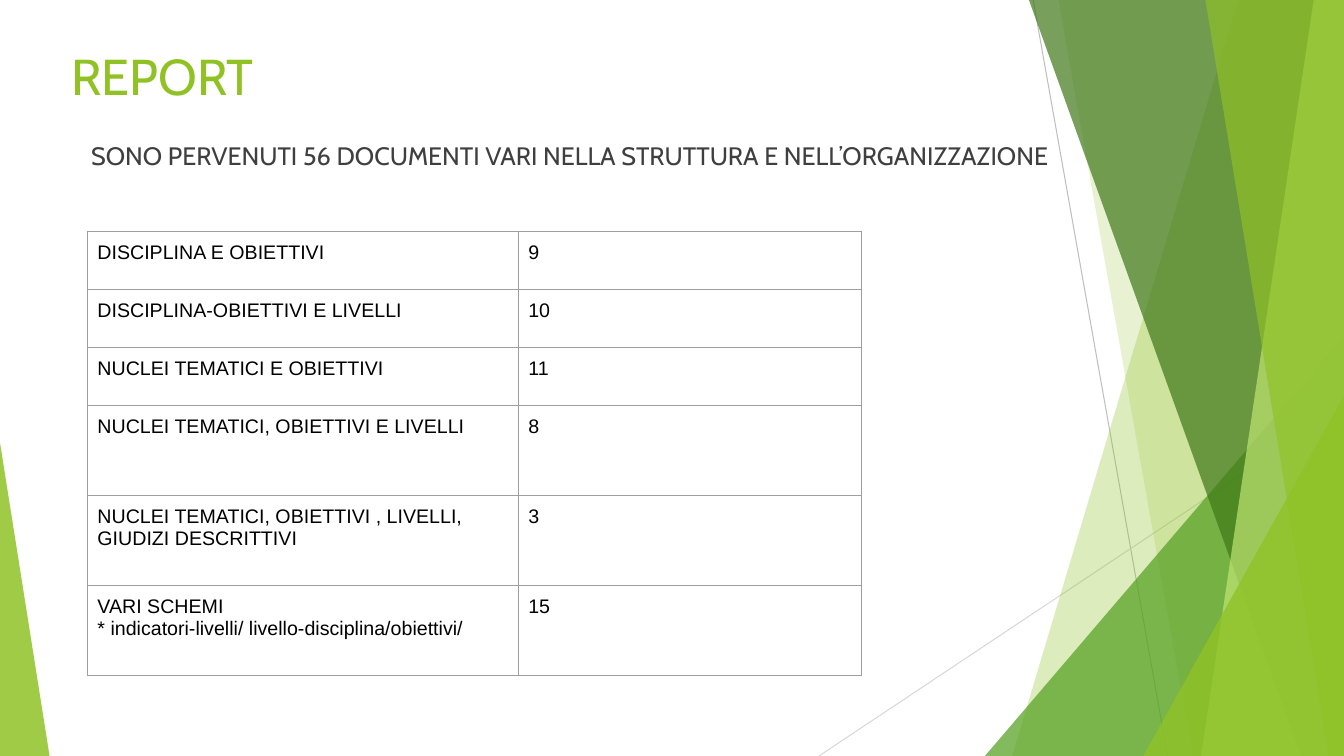
from lxml import etree
from pptx import Presentation
from pptx.dml.color import RGBColor
from pptx.enum.shapes import MSO_CONNECTOR, MSO_SHAPE
from pptx.enum.text import MSO_ANCHOR, MSO_AUTO_SIZE, PP_ALIGN
from pptx.oxml.ns import qn
from pptx.util import Inches, Pt

STRAIGHT = MSO_CONNECTOR.STRAIGHT
TRIANGLE = MSO_SHAPE.ISOSCELES_TRIANGLE
TOP = MSO_ANCHOR.TOP
LEFT = PP_ALIGN.LEFT
NO_AUTOFIT = MSO_AUTO_SIZE.NONE

COLS, ROWS = 160, 90
LIME, GREEN, FOREST, PALE = "90C226", "54A021", "3F7818", "BFE471"
INK, BLACK, BORDER = "3F3F3F", "000000", "9E9E9E"

ENTRIES = [
    ("DISCIPLINA E OBIETTIVI", "9"),
    ("DISCIPLINA-OBIETTIVI E LIVELLI", "10"),
    ("NUCLEI TEMATICI E OBIETTIVI", "11"),
    ("NUCLEI TEMATICI, OBIETTIVI E LIVELLI", "8"),
    ("NUCLEI TEMATICI, OBIETTIVI , LIVELLI, GIUDIZI DESCRITTIVI", "3"),
    ("VARI SCHEMI\n* indicatori-livelli/ livello-disciplina/obiettivi/", "15"),
]


def grid(*units):
    return [Inches(u / 12) for u in units]


def rgb(value):
    return RGBColor.from_string(value)


def write(tf, text, font="Arial", size=14, color=BLACK, indent=0):
    tf.word_wrap = True
    for i, line in enumerate(text.split("\n")):
        p = tf.paragraphs[0] if i == 0 else tf.add_paragraph()
        p.alignment = LEFT
        p.space_before = Pt(0)
        pPr = p._p.get_or_add_pPr()
        pPr.set("marL", str(grid(indent)[0]))
        pPr.set("indent", "0")
        etree.SubElement(pPr, qn("a:buNone"))
        r = p.add_run()
        r.text = line
        r.font.name, r.font.size = font, Pt(size)
        r.font.color.rgb = rgb(color)


class Deck:
    heading_font = "Cabin"
    hairline = 0.75

    def __init__(self):
        self.prs = Presentation()
        self.prs.slide_width, self.prs.slide_height = grid(COLS, ROWS)
        self.s = self.prs.slides.add_slide(self.prs.slide_layouts[1])

    def line(self, x1, y1, x2, y2, color):
        sp = self.s.shapes.add_connector(STRAIGHT, *grid(x1, y1, x2, y2))
        sp.line.color.rgb = rgb(color)
        sp.line.width = Pt(self.hairline)
        etree.SubElement(sp._element.spPr, qn("a:effectLst"))

    def paint(self, sp, color, opacity):
        sp.shadow.inherit = False
        sp.line.fill.background()
        sp.fill.solid()
        sp.fill.fore_color.rgb = rgb(color)
        clr = sp._element.spPr.find(qn("a:solidFill")).find(qn("a:srgbClr"))
        etree.SubElement(clr, qn("a:alpha"), val=str(opacity * 1000))

    def band(self, top_x, bottom_x, color, opacity):
        fb = self.s.shapes.build_freeform(*grid(top_x, 0))
        corners = [(COLS, 0), (COLS, ROWS), (bottom_x, ROWS)]
        fb.add_line_segments([grid(*c) for c in corners])
        self.paint(fb.convert_to_shape(), color, opacity)

    def corner(self, x, y, width, apex, color, opacity):
        sp = self.s.shapes.add_shape(TRIANGLE, *grid(x, y, width, ROWS - y))
        sp.adjustments[0] = apex
        self.paint(sp, color, opacity)

    def placeholder(self, index, box, text, **style):
        sp = self.s.placeholders[index]
        sp.left, sp.top, sp.width, sp.height = grid(*box)
        tf = sp.text_frame
        tf.auto_size = NO_AUTOFIT
        tf.vertical_anchor = TOP
        write(tf, text, font=self.heading_font, **style)
        sp._element.getparent().append(sp._element)

    def border(self, cell):
        tcPr = cell._tc.get_or_add_tcPr()
        for i, side in enumerate(("lnL", "lnR", "lnT", "lnB")):
            ln = etree.Element(qn(f"a:{side}"), w=str(Pt(self.hairline)))
            fill = etree.SubElement(ln, qn("a:solidFill"))
            etree.SubElement(fill, qn("a:srgbClr"), val=BORDER)
            tcPr.insert(i, ln)

    def table(self, x, y, widths, heights, entries):
        box = grid(x, y, sum(widths), sum(heights))
        table = self.s.shapes.add_table(len(heights), len(widths), *box).table
        table.first_row = table.horz_banding = False
        for column, width in zip(table.columns, grid(*widths)):
            column.width = width
        for row, height, entry in zip(table.rows, grid(*heights), entries):
            row.height = height
            for cell, text in zip(row.cells, entry):
                cell.margin_left = cell.margin_right = Inches(0.1)
                cell.margin_top = cell.margin_bottom = Inches(0.1)
                cell.fill.background()
                self.border(cell)
                write(cell.text_frame, text)


def main():
    deck = Deck()
    deck.line(123, 0, 139, ROWS, "BFBFBF")
    deck.line(COLS, 48.4, 97.5, ROWS, "D8D8D8")
    deck.band(147.4, 120.5, LIME, 30)
    deck.band(126, 142, LIME, 20)
    deck.corner(117.25, 40, 42.75, 1, GREEN, 72)
    deck.band(122.5, 154.9, FOREST, 70)
    deck.band(156.4, 143, PALE, 70)
    deck.band(143.5, 158.2, LIME, 65)
    deck.corner(136.1, 47.15, 23.9, 1, LIME, 80)
    deck.corner(0, 52.7, 5.9, 0, LIME, 85)
    deck.placeholder(
        1, (5.15, 16.1, 143.75, 14.5),
        "SONO PERVENUTI 56 DOCUMENTI VARI NELLA STRUTTURA E NELL’ORGANIZZAZIONE",
        size=18, color=INK, indent=4.5)
    deck.placeholder(0, (7.3, 4.8, 114.4, 8.4), "REPORT", size=36, color=LIME)
    deck.table(10.4, 27.6, [51.3, 40.8], [6.9] * 3 + [10.7] * 3, ENTRIES)
    deck.prs.save("out.pptx")


if __name__ == "__main__":
    main()
